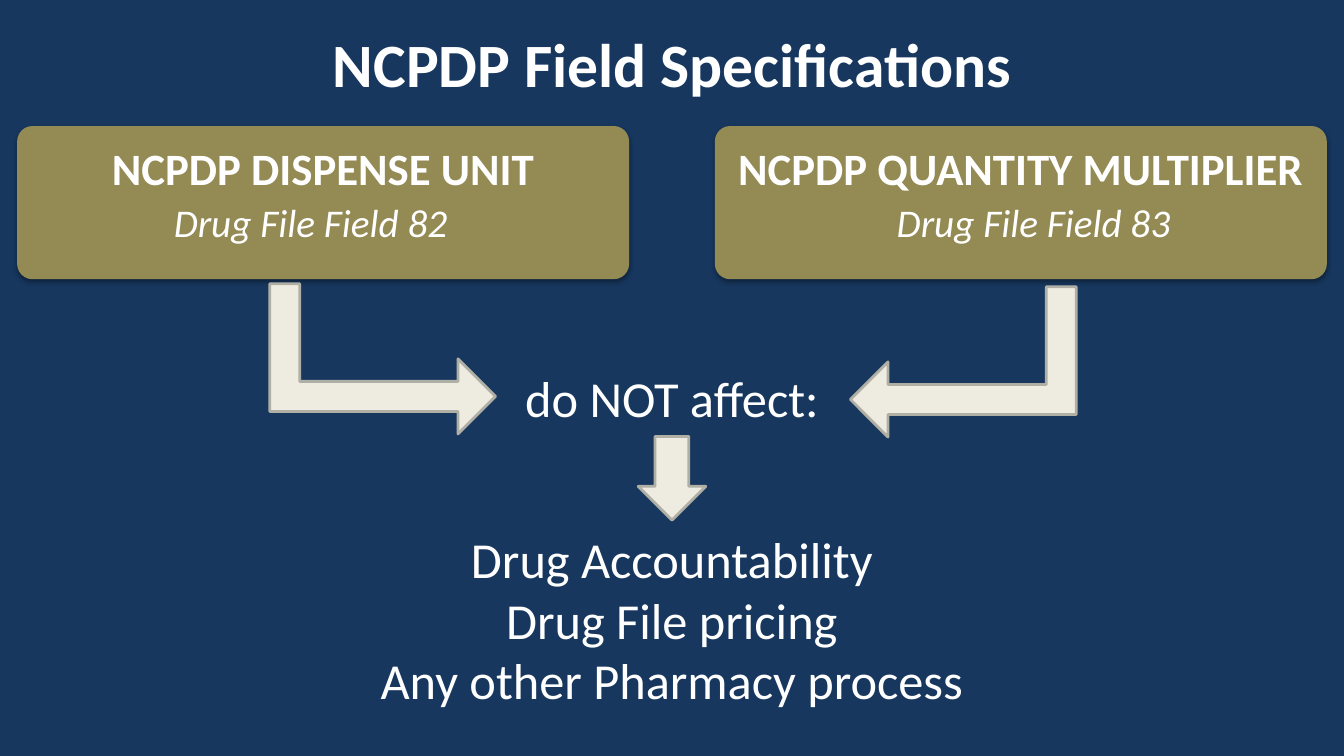
from dataclasses import dataclass

import pptx
import pptx.dml.color
import pptx.enum.shapes
import pptx.enum.text
import pptx.oxml
import pptx.util
from lxml import etree
from pptx.oxml.ns import nsdecls, qn
from pptx.util import Inches

MSO_SHAPE = pptx.enum.shapes.MSO_SHAPE
ANCHOR = pptx.enum.text.MSO_ANCHOR


@dataclass(frozen=True)
class Theme:
    font: str = "Calibri"
    background: str = "17375E"
    text: str = "FFFFFF"
    card: str = "948A54"
    arrow: str = "EEECE1"
    arrow_edge: str = "B0AFA6"
    title_size: int = 44
    statement_size: int = 36
    heading_size: int = 32
    label_size: int = 28


@dataclass(frozen=True)
class Box:
    left: float
    top: float
    width: float
    height: float

    def lengths(self) -> tuple:
        return tuple(Inches(v) for v in (self.left, self.top, self.width, self.height))


@dataclass(frozen=True)
class FieldCard:
    heading: str
    label: str
    left: float
    label_left: float


@dataclass(frozen=True)
class Arrow:
    kind: int
    box: Box
    adjustments: tuple = ()
    rotation: int = 0
    flipped: bool = False


THEME = Theme()
CARD_TOP, CARD_WIDTH, CARD_HEIGHT = 1.25, 6.07, 1.52
BENT = (0.2, 0.25, 0.25)

CARDS = (
    FieldCard("NCPDP DISPENSE UNIT", "Drug File Field 82", 0.17, 1.08),
    FieldCard("NCPDP QUANTITY MULTIPLIER", "Drug File Field 83", 7.09, 8.25),
)
ARROWS = (
    Arrow(MSO_SHAPE.BENT_UP_ARROW, Box(3.05, 2.44, 1.49, 2.24), BENT, 90),
    Arrow(MSO_SHAPE.BENT_UP_ARROW, Box(8.81, 2.47, 1.49, 2.24), BENT, 90, True),
    Arrow(MSO_SHAPE.DOWN_ARROW, Box(6.33, 4.33, 0.67, 0.83)),
)
UNAFFECTED = ("Drug Accountability", "Drug File pricing", "Any other Pharmacy process")


def rgb(value: str) -> pptx.dml.color.RGBColor:
    return pptx.dml.color.RGBColor.from_string(value)


def write_lines(frame, lines: tuple, size: int, bold: bool = False, italic: bool = False) -> None:
    frame.word_wrap = True
    frame.text = "\n".join(lines)
    for paragraph in frame.paragraphs:
        paragraph.alignment = pptx.enum.text.PP_ALIGN.CENTER
        font = paragraph.font
        font.name, font.size = THEME.font, pptx.util.Pt(size)
        font.bold, font.italic = bold, italic
        font.color.rgb = rgb(THEME.text)


def place(placeholder, box: Box) -> None:
    (placeholder.left, placeholder.top,
     placeholder.width, placeholder.height) = box.lengths()
    placeholder.text_frame.auto_size = pptx.enum.text.MSO_AUTO_SIZE.NONE


def add_text(slide, box: Box, text: str, size: int, italic: bool = False) -> None:
    frame = slide.shapes.add_textbox(*box.lengths()).text_frame
    write_lines(frame, (text,), size, italic=italic)


def add_soft_shadow(shape) -> None:
    shape.shadow.inherit = False
    effects = shape._element.spPr.find(qn("a:effectLst"))
    effects.append(pptx.oxml.parse_xml(
        f'<a:outerShdw {nsdecls("a")} blurRad="40000" dist="23000" dir="5400000" '
        'rotWithShape="0"><a:srgbClr val="000000"><a:alpha val="35000"/>'
        '</a:srgbClr></a:outerShdw>'))


def add_card(slide, field: FieldCard) -> None:
    box = Box(field.left, CARD_TOP, CARD_WIDTH, CARD_HEIGHT)
    card = slide.shapes.add_shape(MSO_SHAPE.ROUNDED_RECTANGLE, *box.lengths())
    card.adjustments[0] = 0.1
    card.fill.solid()
    card.fill.fore_color.rgb = rgb(THEME.card)
    card.line.fill.background()
    add_soft_shadow(card)
    frame = card.text_frame
    frame.vertical_anchor = ANCHOR.TOP
    frame.margin_left = frame.margin_right = Inches(0.04)
    frame.margin_top = Inches(0.16)
    write_lines(frame, (field.heading,), THEME.heading_size, bold=True)
    frame.paragraphs[0].line_spacing = 0.9
    add_text(slide, Box(field.label_left, 1.92, 4, 0.57), field.label,
             THEME.label_size, italic=True)


def add_arrow(slide, arrow: Arrow) -> None:
    shape = slide.shapes.add_shape(arrow.kind, *arrow.box.lengths())
    for index, value in enumerate(arrow.adjustments):
        shape.adjustments[index] = value
    shape.rotation = arrow.rotation
    if arrow.flipped:
        shape._element.spPr.find(qn("a:xfrm")).set("flipV", "1")
    shape.shadow.inherit = False
    shape.fill.solid()
    shape.fill.fore_color.rgb = rgb(THEME.arrow)
    shape.line.color.rgb = rgb(THEME.arrow_edge)
    shape.line.width = pptx.util.Pt(2)


def fill_unaffected_list(body) -> None:
    place(body, Box(3.33, 5.19, 6.67, 1.92))
    frame = body.text_frame
    frame.vertical_anchor = ANCHOR.TOP
    frame.text = "\n".join(UNAFFECTED)
    write_lines(frame, UNAFFECTED, THEME.statement_size)
    for paragraph in frame.paragraphs:
        paragraph.space_before = pptx.util.Pt(0)
        properties = paragraph._p.get_or_add_pPr()
        properties.set("marL", "0")
        properties.set("indent", "0")
        bullet = etree.Element(qn("a:buNone"))
        properties.find(qn("a:defRPr")).addprevious(bullet)


def main() -> None:
    deck = pptx.Presentation()
    deck.slide_width, deck.slide_height = Inches(13.33), Inches(7.5)
    slide = deck.slides.add_slide(deck.slide_layouts[1])
    slide.background.fill.solid()
    slide.background.fill.fore_color.rgb = rgb(THEME.background)

    title = slide.shapes.title
    place(title, Box(1.67, 0, 10, 1.25))
    title.text_frame.vertical_anchor = ANCHOR.MIDDLE
    write_lines(title.text_frame, ("NCPDP Field Specifications",), THEME.title_size, bold=True)

    for field in CARDS:
        add_card(slide, field)
    for arrow in ARROWS:
        add_arrow(slide, arrow)
    add_text(slide, Box(3.33, 3.59, 6.67, 0.71), "do NOT affect:", THEME.statement_size)
    fill_unaffected_list(slide.placeholders[1])
    deck.save("out.pptx")


if __name__ == "__main__":
    main()
